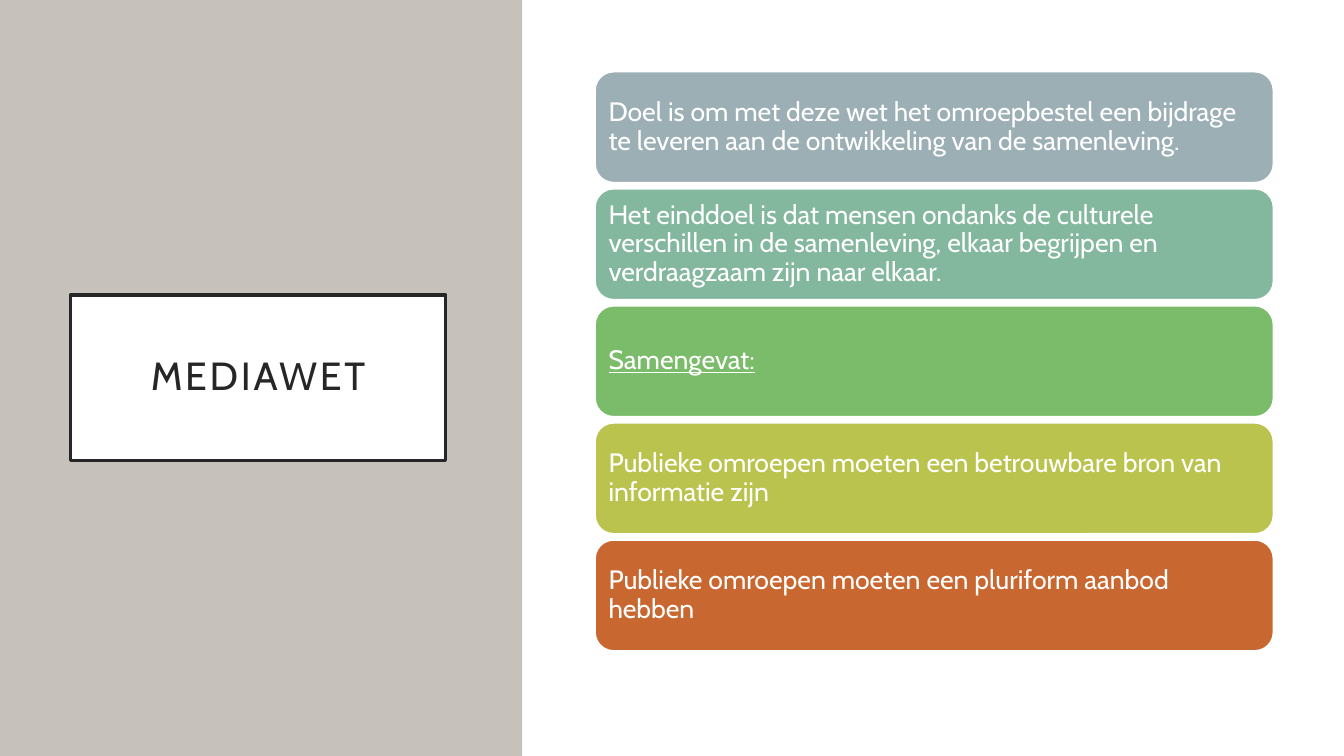
"""Build the Mediawet slide: a title panel beside five coloured statements."""
from pptx import Presentation
from pptx.dml.color import RGBColor
from pptx.enum.shapes import MSO_SHAPE
from pptx.enum.text import MSO_ANCHOR, PP_ALIGN
from pptx.util import Cm, Pt

RECTANGLE = MSO_SHAPE.RECTANGLE
ROUNDED = MSO_SHAPE.ROUNDED_RECTANGLE
MIDDLE = MSO_ANCHOR.MIDDLE
LEFT = PP_ALIGN.LEFT
CENTER = PP_ALIGN.CENTER

FONT = "Cabin"
WHITE = RGBColor(0xFF, 0xFF, 0xFF)
DARK = RGBColor(0x26, 0x26, 0x26)
TAUPE = RGBColor(0xC6, 0xC1, 0xBA)
GREY_BLUE = RGBColor(0x9B, 0xAF, 0xB5)
SEA_GREEN = RGBColor(0x83, 0xB7, 0x9E)
GREEN = RGBColor(0x7A, 0xBC, 0x69)
LIME = RGBColor(0xBA, 0xC3, 0x4D)
ORANGE = RGBColor(0xC9, 0x67, 0x31)

STATEMENTS = [
    ("Doel is om met deze wet het omroepbestel een bijdrage te leveren aan de "
     "ontwikkeling van de samenleving.", GREY_BLUE, False),
    ("Het einddoel is dat mensen ondanks de culturele verschillen in de samenleving, "
     "elkaar begrijpen en verdraagzaam zijn naar elkaar.", SEA_GREEN, False),
    ("Samengevat:", GREEN, True),
    ("Publieke omroepen moeten een betrouwbare bron van informatie zijn", LIME, False),
    ("Publieke omroepen moeten een pluriform aanbod hebben", ORANGE, False),
]
FIRST_TOP = 1.81
PITCH = 2.95


def add_box(kind, left, top, width, height, fill):
    shape = slide.shapes.add_shape(kind, Cm(left), Cm(top), Cm(width), Cm(height))
    shape.shadow.inherit = False
    shape.fill.solid()
    shape.fill.fore_color.rgb = fill
    return shape


def write_text(shape, text, size, color, alignment, margin):
    frame = shape.text_frame
    frame.word_wrap = True
    frame.vertical_anchor = MIDDLE
    frame.margin_left = frame.margin_right = Cm(margin)
    frame.margin_top = frame.margin_bottom = Cm(margin)
    frame.text = text
    paragraph = frame.paragraphs[0]
    paragraph.alignment = alignment
    paragraph.line_spacing = 0.9
    run = paragraph.runs[0]
    run.font.name = FONT
    run.font.size = Pt(size)
    run.font.color.rgb = color
    return run


presentation = Presentation()
presentation.slide_width = Cm(33.87)
presentation.slide_height = Cm(19.05)
slide = presentation.slides.add_slide(presentation.slide_layouts[6])

panel = add_box(RECTANGLE, 0, 0, 13.16, 19.05, TAUPE)
panel.line.fill.background()

title = add_box(RECTANGLE, 1.78, 7.44, 9.45, 4.17, WHITE)
title.line.color.rgb = DARK
title.line.width = Pt(2.5)
title_run = write_text(title, "MEDIAWET", 28, DARK, CENTER, 0.5)
title_run.font._element.set("spc", "200")

for index, (text, color, underlined) in enumerate(STATEMENTS):
    statement = add_box(ROUNDED, 15, FIRST_TOP + index * PITCH, 17.09, 2.79, color)
    statement.line.color.rgb = WHITE
    statement.line.width = Pt(1)
    statement_run = write_text(statement, text, 19, WHITE, LEFT, 0.2)
    statement_run.font.underline = underlined

presentation.save("out.pptx")
